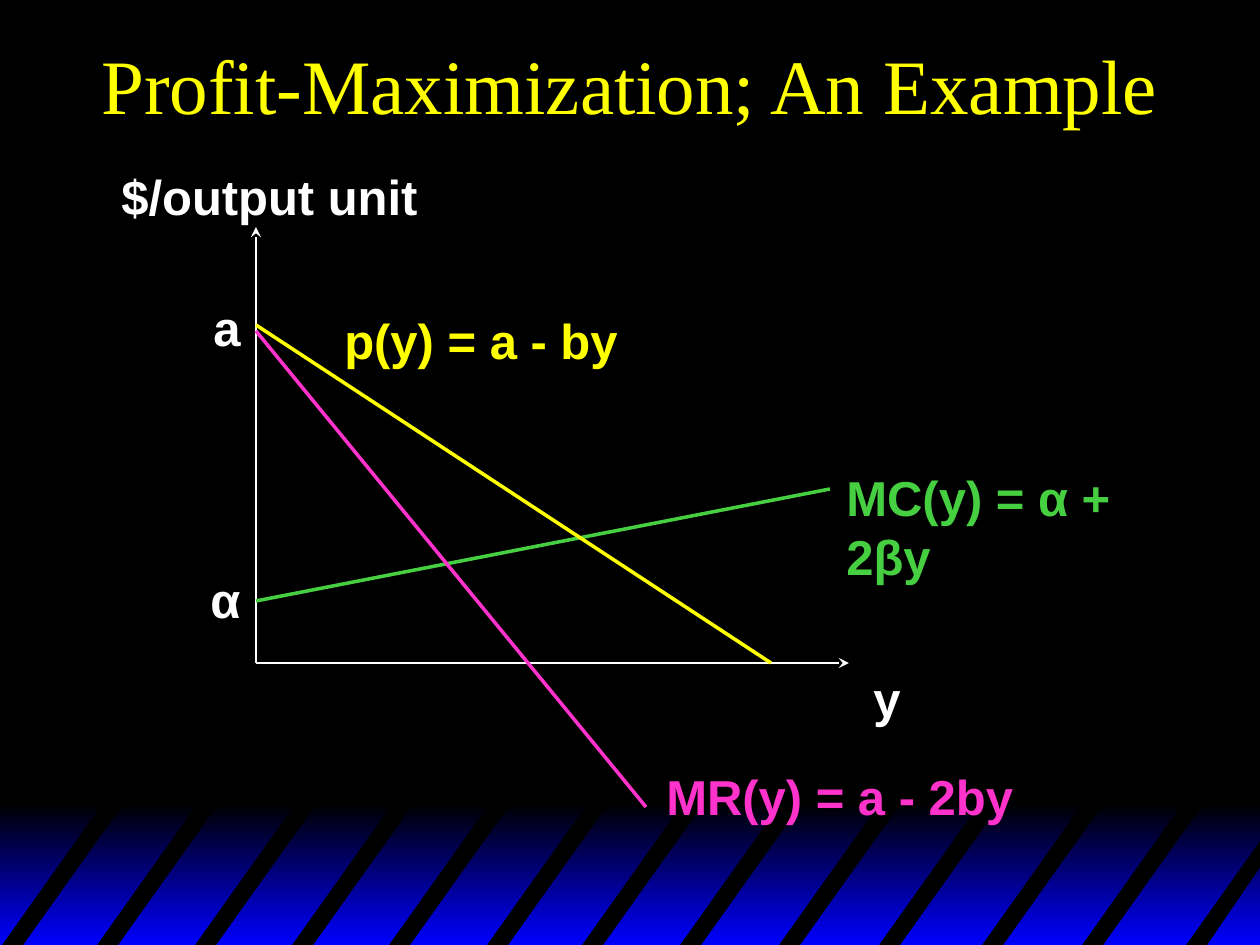
"""Build the profit-maximization slide with its demand, revenue and cost lines."""
from lxml.etree import SubElement
from pptx import Presentation
from pptx.dml.color import RGBColor
from pptx.enum.shapes import MSO_CONNECTOR, MSO_SHAPE
from pptx.enum.text import MSO_ANCHOR, PP_ALIGN
from pptx.oxml.ns import qn
from pptx.util import Emu, Pt

PX_PER_INCH = 126
WIDTH, HEIGHT = 1260, 945
BLACK, WHITE, BLUE = "000000", "FFFFFF", "0000FF"
YELLOW, GREEN, PINK = "FFFF00", "46CF41", "FF33CC"

STRIPE_LEFTS = (0, 95, 193, 290, 387, 485, 580, 678, 777, 877, 980, 1080)
STRIPE_TOP, STRIPE_BOTTOM = 799, 948
STRIPE_WIDTH, STRIPE_SLANT = 21, 106
LAST_STRIPE = [(1184, 948), (1263, 837), (1263, 863), (1205, 948)]

ORIGIN = (256, 663)
AXIS_TIPS = ((256, 227), (849, 663))
CURVES = (
    ((256, 601), (830, 489), GREEN),
    ((256, 325), (771, 663), YELLOW),
    ((256, 331), (646, 807), PINK),
)
LABELS = (
    ("$/output unit", 109, 160, 326, WHITE),
    ("y", 861, 662, 54, WHITE),
    ("MC(y) = α + 2βy", 834, 461, 370, GREEN),
    ("p(y) = a - by", 332, 304, 302, YELLOW),
    ("MR(y) = a - 2by", 654, 760, 376, PINK),
    ("a", 201, 291, 54, WHITE),
    ("α", 198, 563, 57, WHITE),
)


def px(length):
    """Turn pixels into EMU."""
    return Emu(round(length * 914400 / PX_PER_INCH))


def color(code):
    """Turn a hex string into a colour."""
    return RGBColor.from_string(code)


def set_font(paragraph, name, size, code, bold=False):
    """Set the font of a whole paragraph."""
    font = paragraph.font
    font.name, font.size, font.bold = name, Pt(size), bold
    font.color.rgb = color(code)


def add_title(slide, text):
    """Place and format the title."""
    title = slide.shapes.title
    title.left, title.top, title.width, title.height = 0, 0, px(WIDTH), px(168)
    frame = title.text_frame
    frame.text = text
    frame.vertical_anchor = MSO_ANCHOR.MIDDLE
    paragraph = frame.paragraphs[0]
    paragraph.alignment = PP_ALIGN.CENTER
    set_font(paragraph, "Times New Roman", 44, YELLOW)


def add_glow(slide):
    """Add the black-to-blue band along the bottom."""
    band = slide.shapes.add_shape(MSO_SHAPE.RECTANGLE, 0, px(804), px(WIDTH), px(HEIGHT - 804))
    band.shadow.inherit = False
    band.line.fill.background()
    band.fill.gradient()
    band.fill.gradient_angle = 270
    for stop, code in zip(band.fill.gradient_stops, (BLACK, BLUE)):
        stop.color.rgb = color(code)


def add_stripe(slide, corners):
    """Add one black slanted stripe."""
    points = [(px(x), px(y)) for x, y in corners]
    builder = slide.shapes.build_freeform(*points[0])
    builder.add_line_segments(points[1:], close=True)
    stripe = builder.convert_to_shape()
    stripe.shadow.inherit = False
    stripe.fill.solid()
    stripe.fill.fore_color.rgb = color(BLACK)
    stripe.line.fill.background()


def stripe_corners(left):
    """Return the corners of a full stripe that starts at left."""
    top_left = left + STRIPE_SLANT
    return [(left, STRIPE_BOTTOM), (top_left, STRIPE_TOP),
            (top_left + STRIPE_WIDTH, STRIPE_TOP), (left + STRIPE_WIDTH, STRIPE_BOTTOM)]


def add_line(slide, start, end, code, weight, arrow=False):
    """Add a straight line, with a stealth arrowhead at its end if asked."""
    line = slide.shapes.add_connector(MSO_CONNECTOR.STRAIGHT, *map(px, start + end))
    line.line.color.rgb = color(code)
    line.line.width = Pt(weight)
    if arrow:
        SubElement(line.line._get_or_add_ln(), qn("a:tailEnd"), type="stealth", w="med", len="med")
    SubElement(line._element.spPr, qn("a:effectLst"))


def add_label(slide, text, left, top, width, code):
    """Add a bold label."""
    frame = slide.shapes.add_textbox(px(left), px(top), px(width), px(72)).text_frame
    frame.word_wrap = True
    frame.text = text
    set_font(frame.paragraphs[0], "Arial", 28, code, bold=True)


def main():
    """Build and save the slide."""
    deck = Presentation()
    deck.slide_width, deck.slide_height = px(WIDTH), px(HEIGHT)
    slide = deck.slides.add_slide(deck.slide_layouts[5])
    slide.background.fill.solid()
    slide.background.fill.fore_color.rgb = color(BLACK)
    add_glow(slide)
    for corners in [*map(stripe_corners, STRIPE_LEFTS), LAST_STRIPE]:
        add_stripe(slide, corners)
    add_title(slide, "Profit-Maximization; An Example")
    for tip in AXIS_TIPS:
        add_line(slide, ORIGIN, tip, WHITE, 1, arrow=True)
    for start, end, code in CURVES:
        add_line(slide, start, end, code, 2)
    for label in LABELS:
        add_label(slide, *label)
    deck.save("out.pptx")


if __name__ == "__main__":
    main()
